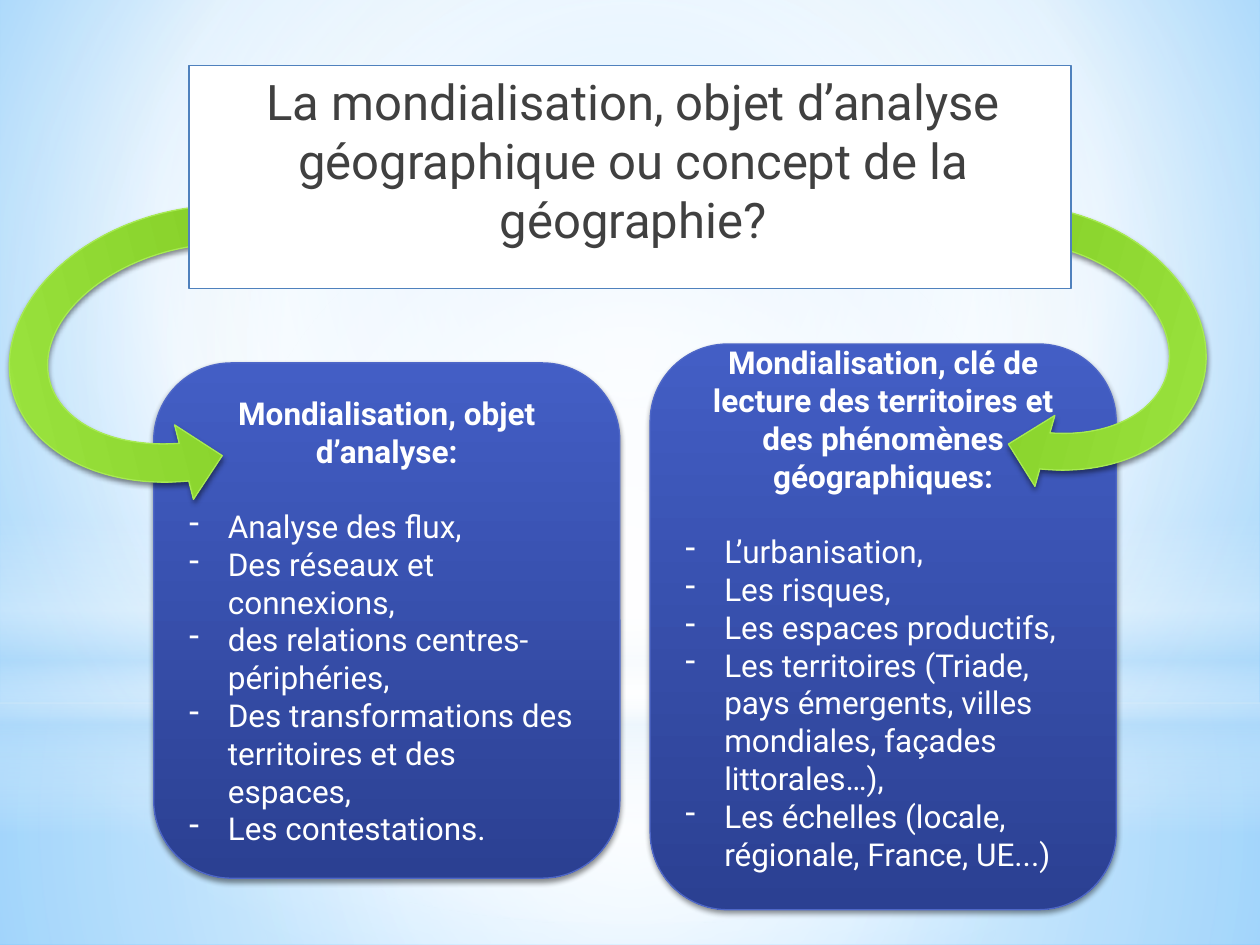
from dataclasses import dataclass
from typing import Optional

from lxml import etree
from pptx import Presentation
from pptx.dml.color import RGBColor
from pptx.enum.shapes import MSO_SHAPE
from pptx.enum.text import MSO_ANCHOR, PP_ALIGN
from pptx.oxml.ns import qn
from pptx.util import Inches, Pt

RECT, OVAL = MSO_SHAPE.RECTANGLE, MSO_SHAPE.OVAL
ROUNDED, CURVED = MSO_SHAPE.ROUNDED_RECTANGLE, MSO_SHAPE.CIRCULAR_ARROW
CENTER, LEFT = PP_ALIGN.CENTER, PP_ALIGN.LEFT
TOP, MIDDLE = MSO_ANCHOR.TOP, MSO_ANCHOR.MIDDLE


@dataclass(frozen=True)
class Gradient:
    stops: tuple  # (position %, colour, opacity %)
    focus: Optional[tuple] = None  # left, top, right, bottom %; linear if None


@dataclass(frozen=True)
class Theme:
    font: str = "Roboto"
    title_size: float = 28
    card_size: float = 18
    blank_line: float = 21.5
    title_text: str = "404040"
    title_line: str = "4F81BD"
    white: str = "FFFFFF"
    card_line: str = "4E67C8"
    arrow_line: str = "A7EA52"
    sky: Gradient = Gradient(
        ((0, "9ED5FF", 100), (60, "FFFFFF", 100), (100, "5BB9FF", 100)),
        (20, 10, 20, 60))
    card: Gradient = Gradient(((0, "435EC5", 100), (100, "2B4092", 100)))
    arrow: Gradient = Gradient(((0, "A0E844", 100), (100, "75C016", 100)))


@dataclass(frozen=True)
class Layer:
    shape: int
    top: float
    height: float
    fill: Gradient


@dataclass(frozen=True)
class Card:
    left: float
    top: float
    height: float
    heading: str
    items: tuple
    bottom_inset: float = 0.05


@dataclass(frozen=True)
class Arrow:
    box: tuple
    rotation: float
    flipped: bool = False


THEME = Theme()
MIDPOINT = (50, 50, 50, 50)
CARD_WIDTH = 3.7
ARROW_ADJUSTMENTS = (0.125, 11.423, 204.577, 81.906, 0.125)

LAYERS = (
    Layer(RECT, 5.58, 1.92, Gradient(
        ((0, "FFFFFF", 91), (37, "FFFFFF", 76), (100, "B4DCFA", 79)), MIDPOINT)),
    Layer(RECT, 0, 5.58, Gradient(
        ((0, "FFFFFF", 89), (48, "FFFFFF", 62), (100, "B4DCFA", 79)), MIDPOINT)),
    Layer(RECT, 4.12, 2.5, Gradient(
        ((0, "FFFFFF", 0), (29, "FFFFFF", 30), (45, "B4DCFA", 40),
         (55, "FFFFFF", 26), (65, "B4DCFA", 60), (100, "FFFFFF", 0)))),
    Layer(OVAL, 1.75, 5.58, Gradient(
        ((0, "FFFFFF", 100), (56, "FFFFFF", 0)), MIDPOINT)),
)
CARDS = (
    Card(1.22, 2.88, 4.09, "Mondialisation, objet d’analyse:", (
        "Analyse des flux,",
        "Des réseaux et connexions,",
        "des relations centres-périphéries,",
        "Des transformations des territoires et des espaces,",
        "Les contestations.")),
    Card(5.16, 2.73, 4.49,
         "Mondialisation, clé de lecture des territoires et des phénomènes géographiques:", (
             "L’urbanisation,",
             "Les risques,",
             "Les espaces productifs,",
             "Les territoires (Triade, pays émergents, villes mondiales, façades littorales…),",
             "Les échelles (locale, régionale, France, UE...)"),
         bottom_inset=0.35),
)
ARROWS = (
    Arrow((0.32, 1.09, 2.44, 3.28), 75.8, flipped=True),
    Arrow((7.07, 1.18, 2.34, 3), 105.7),
)
TITLE = "La mondialisation, objet d’analyse géographique ou concept de la géographie?"


def add_child(parent, tag: str, **attrs):
    return etree.SubElement(parent, qn(tag), {k: str(v) for k, v in attrs.items()})


def set_gradient(fill, holder, gradient: Gradient) -> None:
    """Swap a solid fill inside holder for a gradient with opacity."""
    fill.solid()
    solid = holder.find(qn("a:solidFill"))
    grad = etree.Element(qn("a:gradFill"), {"rotWithShape": "1"})
    stops = add_child(grad, "a:gsLst")
    for position, color, opacity in gradient.stops:
        stop = add_child(stops, "a:gs", pos=position * 1000)
        clr = add_child(stop, "a:srgbClr", val=color)
        if opacity < 100:
            add_child(clr, "a:alpha", val=opacity * 1000)
    if gradient.focus:
        path = add_child(grad, "a:path", path="circle")
        sides = zip("ltrb", gradient.focus)
        add_child(path, "a:fillToRect", **{side: v * 1000 for side, v in sides})
    else:
        add_child(grad, "a:lin", ang=90 * 60000, scaled=0)
    holder.replace(solid, grad)


def add_box(s, kind: int, box: tuple, fill: Gradient, line: Optional[str] = None,
            shadow: bool = False):
    sp = s.shapes.add_shape(kind, *map(Inches, box))
    sp.shadow.inherit = False
    spPr = sp._element.spPr
    set_gradient(sp.fill, spPr, fill)
    if line:
        sp.line.color.rgb = RGBColor.from_string(line)
        sp.line.width = Pt(0.75)
    else:
        sp.line.fill.background()
    if shadow:
        outer = add_child(spPr.find(qn("a:effectLst")), "a:outerShdw",
                          blurRad=Pt(3.1), dist=Pt(1.8), dir=90 * 60000, rotWithShape=0)
        add_child(add_child(outer, "a:srgbClr", val="000000"), "a:alpha", val=45000)
    return sp


def style(p, size: float, color: str, align: int, bold: bool = False) -> None:
    p.alignment = align
    for r in p.runs:
        r.font.name, r.font.size, r.font.bold = THEME.font, Pt(size), bold
        r.font.color.rgb = RGBColor.from_string(color)


def add_card(s, card: Card) -> None:
    sp = add_box(s, ROUNDED, (card.left, card.top, CARD_WIDTH, card.height),
                 THEME.card, THEME.card_line, shadow=True)
    tf = sp.text_frame
    tf.word_wrap, tf.vertical_anchor = True, MIDDLE
    tf.margin_bottom = Inches(card.bottom_inset)
    tf.text = "\n".join((card.heading, *card.items))
    heading, *items = tf.paragraphs
    style(heading, THEME.card_size, THEME.white, CENTER, bold=True)
    heading.space_after = Pt(THEME.blank_line)
    for p in items:
        style(p, THEME.card_size, THEME.white, LEFT)
        pPr = p._p.get_or_add_pPr()
        pPr.set("marL", str(Inches(0.31)))
        pPr.set("indent", str(-Inches(0.31)))
        add_child(pPr, "a:buChar", char="-")


def add_arrow(s, arrow: Arrow) -> None:
    sp = add_box(s, CURVED, arrow.box, THEME.arrow, THEME.arrow_line, shadow=True)
    for i, value in enumerate(ARROW_ADJUSTMENTS):
        sp.adjustments[i] = value
    sp.rotation = arrow.rotation
    if arrow.flipped:
        sp._element.spPr.find(qn("a:xfrm")).set("flipV", "1")


def add_title(s) -> None:
    sp = s.shapes.add_textbox(*map(Inches, (1.5, 0.52, 7, 1.77)))
    sp.fill.solid()
    sp.fill.fore_color.rgb = RGBColor.from_string(THEME.white)
    sp.line.color.rgb = RGBColor.from_string(THEME.title_line)
    sp.line.width = Pt(0.75)
    tf = sp.text_frame
    tf.word_wrap, tf.vertical_anchor = True, TOP
    tf.text = TITLE
    p = tf.paragraphs[0]
    style(p, THEME.title_size, THEME.title_text, CENTER)
    p.space_before, p.space_after = Pt(5.6), Pt(3)
    p._p.get_or_add_pPr().set("marL", str(Inches(0.05)))


def main() -> None:
    prs = Presentation()
    prs.slide_width, prs.slide_height = Inches(10), Inches(7.5)
    s = prs.slides.add_slide(prs.slide_layouts[6])

    # Sky background
    fill = s.background.fill
    fill.solid()
    set_gradient(fill, s._element.cSld.find(qn("p:bg")).find(qn("p:bgPr")), THEME.sky)
    for layer in LAYERS:
        add_box(s, layer.shape, (0, layer.top, 10, layer.height), layer.fill)

    # Cards, then the arrows that lead to them from the title
    for card in CARDS:
        add_card(s, card)
    for arrow in ARROWS:
        add_arrow(s, arrow)
    add_title(s)

    prs.save("out.pptx")


if __name__ == "__main__":
    main()
